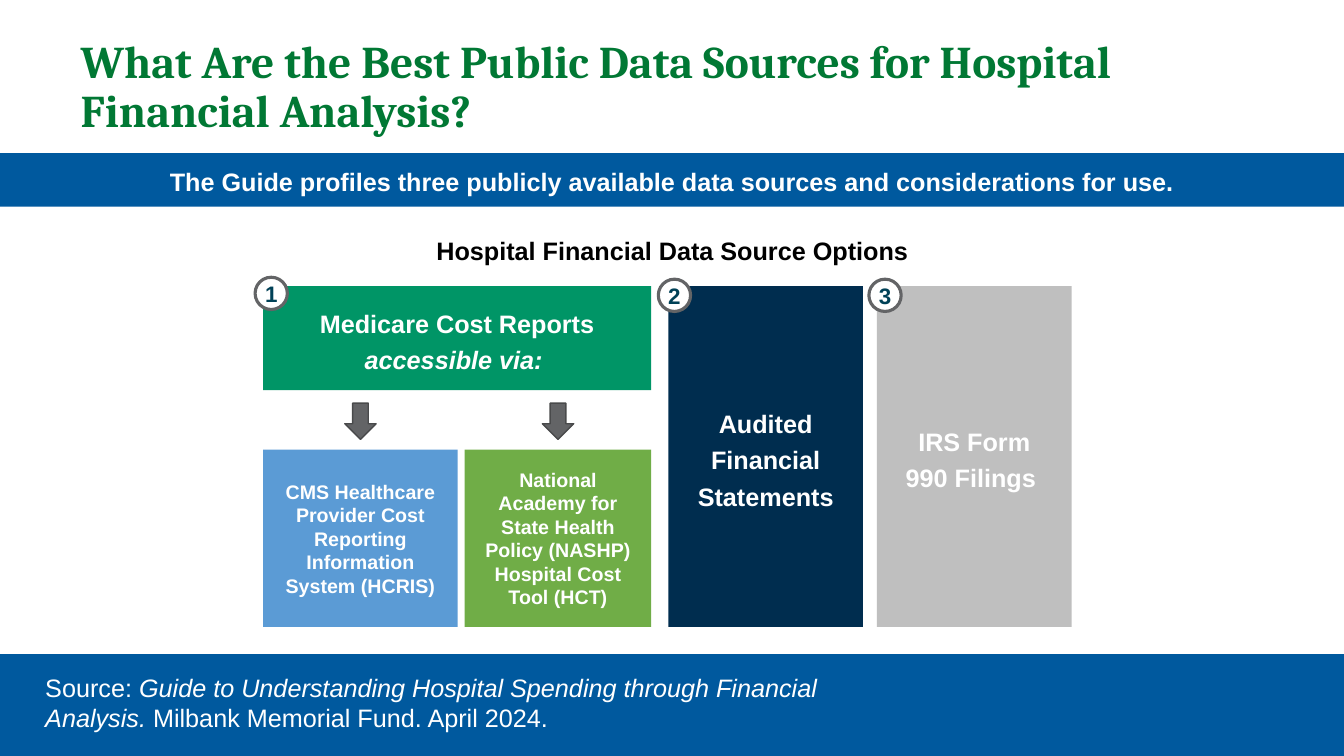
"""Build a slide on public data sources for hospital financial analysis."""
from dataclasses import dataclass

from pptx import Presentation
from pptx.dml.color import RGBColor
from pptx.enum.shapes import MSO_SHAPE
from pptx.enum.text import MSO_ANCHOR, MSO_AUTO_SIZE, PP_ALIGN
from pptx.util import Inches, Pt

RECTANGLE = MSO_SHAPE.RECTANGLE
OVAL = MSO_SHAPE.OVAL
DOWN_ARROW = MSO_SHAPE.DOWN_ARROW
TOP, MIDDLE = MSO_ANCHOR.TOP, MSO_ANCHOR.MIDDLE
LEFT, CENTER = PP_ALIGN.LEFT, PP_ALIGN.CENTER
FIXED_SIZE = MSO_AUTO_SIZE.NONE

PAGE_WIDTH, PAGE_HEIGHT = Inches(13.33), Inches(7.5)
COLUMN, ROW = PAGE_WIDTH / 100, PAGE_HEIGHT / 100
PADDING = 1.5 * COLUMN
TITLE_ONLY = 5

COLORS = {
    "white": "FFFFFF", "black": "000000", "title": "017834", "band": "00599E",
    "navy": "002D4F", "silver": "BFBFBF", "emerald": "009566",
    "sky": "5B9BD5", "leaf": "70AD47", "badge text": "004157",
    "gray": "636466", "arrow edge": "494A4B",
}


@dataclass(frozen=True)
class Area:
    """Position and size in columns and rows, a hundred of each per page."""
    left: float
    top: float
    width: float
    height: float

    def lengths(self) -> tuple[int, ...]:
        """Return the area as slide lengths."""
        return (round(self.left * COLUMN), round(self.top * ROW),
                round(self.width * COLUMN), round(self.height * ROW))


@dataclass(frozen=True)
class Span:
    """A stretch of text in one style."""
    text: str
    italic: bool = False


@dataclass(frozen=True)
class Style:
    """Look of a paragraph."""
    size: float
    color: str = "white"
    bold: bool = True
    font: str = "Arial"
    align: PP_ALIGN = CENTER
    anchor: MSO_ANCHOR = MIDDLE
    spacing: float | Pt = 1.0


@dataclass(frozen=True)
class Block:
    """A filled box with centred text."""
    area: Area
    fill: str
    spans: tuple[Span, ...]
    style: Style
    padding: float = PADDING


@dataclass(frozen=True)
class Badge:
    """A numbered circle on the corner of a block."""
    left: float
    top: float
    number: str


SOURCE_STYLE = Style(18, spacing=Pt(26))
TOOL_STYLE = Style(14)
BADGE_STYLE = Style(16, "badge text")
TITLE_STYLE = Style(32.4, "title", font="Cambria", align=LEFT, anchor=TOP, spacing=0.9)
CITATION_STYLE = Style(18, bold=False, align=LEFT, anchor=TOP)

TITLE_AREA = Area(5.25, 4.53, 86.25, 9.33)
FOOTER_AREA = Area(0, 86.53, 100, 13.47)
CITATION_AREA = Area(2.63, 88.27, 61.58, 9.47)
TITLE = (Span("What Are the Best Public Data Sources for Hospital Financial Analysis?"),)
CITATION = (
    Span("Source: "),
    Span("Guide to Understanding Hospital Spending through Financial Analysis. ", True),
    Span("Milbank Memorial Fund. April 2024."),
)

HEADERS = (
    Block(Area(0, 20.27, 100, 7.07), "band",
          (Span("The Guide profiles three publicly available data sources "
                "and considerations for use."),), Style(18, spacing=1.1), 0),
    Block(Area(3.38, 30.93, 93.3, 4.27), "white",
          (Span("Hospital Financial Data Source Options"),), Style(18, "black"), 0),
)
SOURCES = (
    Block(Area(19.58, 37.87, 28.88, 13.73), "emerald",
          (Span("Medicare Cost Reports "), Span("accessible via: ", True)), SOURCE_STYLE),
    Block(Area(49.73, 37.87, 14.48, 45.07), "navy",
          (Span("Audited Financial Statements"),), SOURCE_STYLE),
    Block(Area(65.25, 37.87, 14.48, 45.07), "silver",
          (Span("IRS Form 990 Filings "),), SOURCE_STYLE),
)
TOOLS = (
    Block(Area(19.58, 59.47, 14.48, 23.47), "sky",
          (Span("CMS Healthcare Provider Cost Reporting Information System (HCRIS)"),),
          TOOL_STYLE),
    Block(Area(34.58, 59.47, 13.88, 23.47), "leaf",
          (Span("National Academy for State Health Policy (NASHP) "
                "Hospital Cost Tool (HCT)"),), TOOL_STYLE),
)
BADGES = (Badge(18.98, 36.67, "1"), Badge(48.98, 36.93, "2"), Badge(64.65, 36.93, "3"))
BADGE_WIDTH, BADGE_HEIGHT = 2.4, 4.27
ARROW_TOP, ARROW_WIDTH, ARROW_HEIGHT = 53.33, 2.33, 4.8


def rgb(name: str) -> RGBColor:
    """Look up a colour by name."""
    return RGBColor.from_string(COLORS[name])


def write(shape, spans: tuple[Span, ...], style: Style, padding: float | None = None) -> None:
    """Write styled text into a shape."""
    frame = shape.text_frame
    frame.word_wrap = True
    frame.auto_size = FIXED_SIZE
    frame.vertical_anchor = style.anchor
    if padding is not None:
        frame.margin_left = frame.margin_right = round(padding)
        frame.margin_top = frame.margin_bottom = round(padding)
    paragraph = frame.paragraphs[0]
    paragraph.alignment = style.align
    paragraph.line_spacing = style.spacing
    for span in spans:
        run = paragraph.add_run()
        run.text = span.text
        run.font.name = style.font
        run.font.size = Pt(style.size)
        run.font.bold = style.bold
        run.font.italic = span.italic
        run.font.color.rgb = rgb(style.color)


def add_figure(page, kind: MSO_SHAPE, area: Area, fill: str,
               edge: str | None = None, weight: float = 1):
    """Add a filled preset shape, outlined when an edge colour is given."""
    shape = page.shapes.add_shape(kind, *area.lengths())
    shape.shadow.inherit = False
    shape.fill.solid()
    shape.fill.fore_color.rgb = rgb(fill)
    if edge is None:
        shape.line.fill.background()
    else:
        shape.line.color.rgb = rgb(edge)
        shape.line.width = Pt(weight)
    return shape


def add_block(page, block: Block) -> None:
    """Add a filled box with its text."""
    shape = add_figure(page, RECTANGLE, block.area, block.fill)
    write(shape, block.spans, block.style, block.padding)


def add_badge(page, badge: Badge) -> None:
    """Add a numbered circle."""
    area = Area(badge.left, badge.top, BADGE_WIDTH, BADGE_HEIGHT)
    shape = add_figure(page, OVAL, area, "white", "gray", 2.25)
    write(shape, (Span(badge.number),), BADGE_STYLE, 0)


def add_arrow(page, target: Area) -> None:
    """Add an arrow pointing down at the middle of a box."""
    left = target.left + (target.width - ARROW_WIDTH) / 2
    area = Area(left, ARROW_TOP, ARROW_WIDTH, ARROW_HEIGHT)
    add_figure(page, DOWN_ARROW, area, "gray", "arrow edge")


def main() -> None:
    """Build and save the deck."""
    deck = Presentation()
    deck.slide_width, deck.slide_height = PAGE_WIDTH, PAGE_HEIGHT
    page = deck.slides.add_slide(deck.slide_layouts[TITLE_ONLY])
    title = page.shapes.title
    title.left, title.top, title.width, title.height = TITLE_AREA.lengths()
    write(title, TITLE, TITLE_STYLE)
    add_figure(page, RECTANGLE, FOOTER_AREA, "band")
    for block in HEADERS + SOURCES + TOOLS:
        add_block(page, block)
    for badge in BADGES:
        add_badge(page, badge)
    for tool in TOOLS:
        add_arrow(page, tool.area)
    citation = page.shapes.add_textbox(*CITATION_AREA.lengths())
    write(citation, CITATION, CITATION_STYLE)
    deck.save("out.pptx")


if __name__ == "__main__":
    main()
